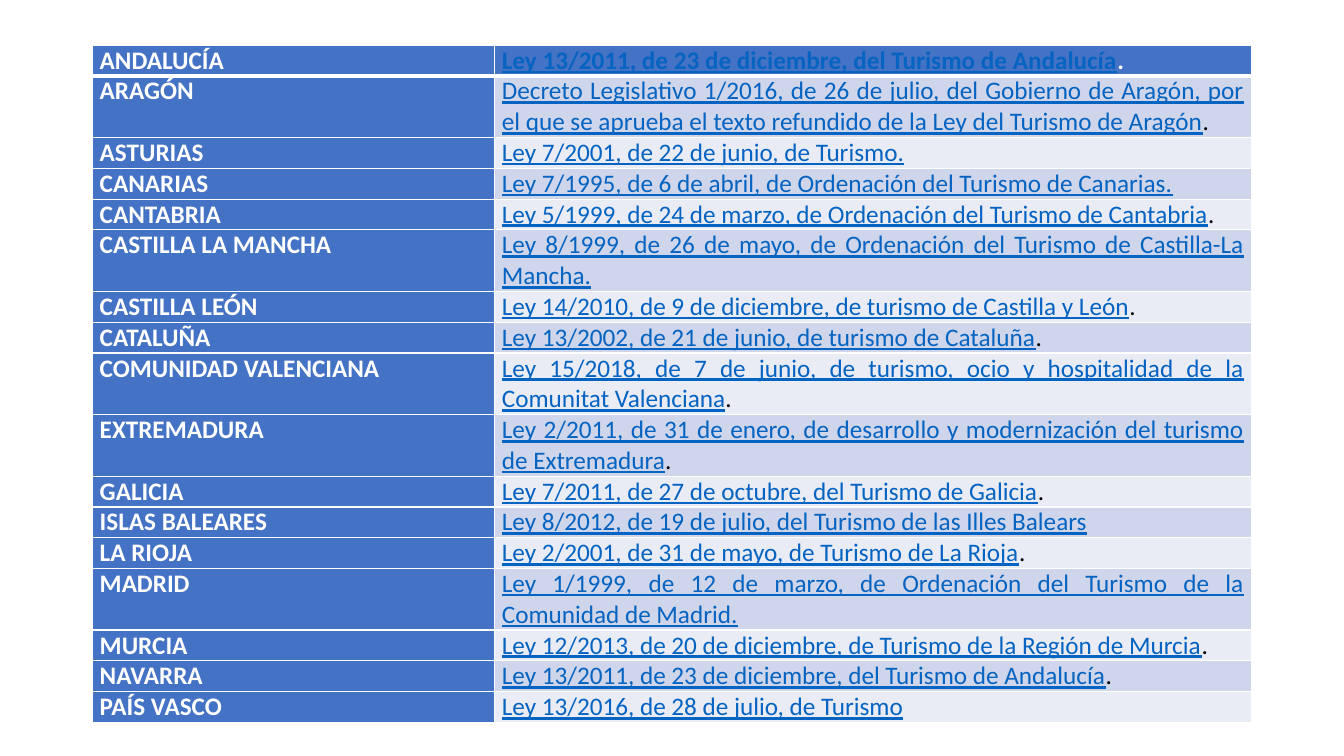
from dataclasses import dataclass
from lxml.etree import SubElement
from pptx import Presentation
from pptx.dml.color import RGBColor
from pptx.enum.text import PP_ALIGN
from pptx.oxml.ns import qn
from pptx.util import Pt

PX = 9525


@dataclass(frozen=True)
class Theme:
    font: str = "Calibri"
    size: int = 18
    white: str = "FFFFFF"
    black: str = "000000"
    blue: str = "4472C4"
    link: str = "0563C1"
    bands: tuple = ("E9EBF5", "CFD5EA")
    thin: int = 1
    thick: int = 3


THEME = Theme()

LAWS = [
    ("ANDALUCÍA", "Ley 13/2011, de 23 de diciembre, del Turismo de Andalucía", "."),
    ("ARAGÓN", "Decreto Legislativo 1/2016, de 26 de julio, del Gobierno de Aragón, "
     "por el que se aprueba el texto refundido de la Ley del Turismo de Aragón", "."),
    ("ASTURIAS", "Ley 7/2001, de 22 de junio, de Turismo.", ""),
    ("CANARIAS", "Ley 7/1995, de 6 de abril, de Ordenación del Turismo de Canarias.", ""),
    ("CANTABRIA", "Ley 5/1999, de 24 de marzo, de Ordenación del Turismo de Cantabria", "."),
    ("CASTILLA LA MANCHA",
     "Ley 8/1999, de 26 de mayo, de Ordenación del Turismo de Castilla-La Mancha.", ""),
    ("CASTILLA LEÓN", "Ley 14/2010, de 9 de diciembre, de turismo de Castilla y León", "."),
    ("CATALUÑA", "Ley 13/2002, de 21 de junio, de turismo de Cataluña", "."),
    ("COMUNIDAD VALENCIANA", "Ley 15/2018, de 7 de junio, de turismo, ocio y "
     "hospitalidad de la Comunitat Valenciana", "."),
    ("EXTREMADURA", "Ley 2/2011, de 31 de enero, de desarrollo y modernización "
     "del turismo de Extremadura", "."),
    ("GALICIA", "Ley 7/2011, de 27 de octubre, del Turismo de Galicia", "."),
    ("ISLAS BALEARES", "Ley 8/2012, de 19 de julio, del Turismo de las Illes Balears", ""),
    ("LA RIOJA", "Ley 2/2001, de 31 de mayo, de Turismo de La Rioja", "."),
    ("MADRID", "Ley 1/1999, de 12 de marzo, de Ordenación del Turismo de la "
     "Comunidad de Madrid.", ""),
    ("MURCIA", "Ley 12/2013, de 20 de diciembre, de Turismo de la Región de Murcia", "."),
    ("NAVARRA", "Ley 13/2011, de 23 de diciembre, del Turismo de Andalucía", "."),
    ("PAÍS VASCO", "Ley 13/2016, de 28 de julio, de Turismo", ""),
]


def write(para, text, color, bold=False, under=False):
    run = para.add_run()
    run.text = text
    font = run.font
    font.name, font.size = THEME.font, Pt(THEME.size)
    font.bold, font.underline = bold, under
    font.color.rgb = RGBColor.from_string(color)


def edge(cell, side, width):
    line = SubElement(cell._tc.get_or_add_tcPr(), qn(f"a:ln{side}"), w=str(Pt(width)))
    fill = SubElement(line, qn("a:solidFill"))
    SubElement(fill, qn("a:srgbClr"), val=THEME.white)


def style(cell, fill, row):
    cell.margin_left = cell.margin_right = 7 * PX
    cell.margin_top = cell.margin_bottom = 0
    for side in "LRTB":
        heavy = (row, side) in ((0, "B"), (1, "T"))
        edge(cell, side, THEME.thick if heavy else THEME.thin)
    cell.fill.solid()
    cell.fill.fore_color.rgb = RGBColor.from_string(fill)
    para = cell.text_frame.paragraphs[0]
    para.alignment = PP_ALIGN.JUSTIFY
    return para


def law_table(slide, left, top, width, split, step):
    tall = {1: 2 * step}
    total = step * (len(LAWS) + 1)
    box = [n * PX for n in (left, top, width, total)]
    table = slide.shapes.add_table(len(LAWS), 2, *box).table
    table.first_col = True
    table.columns[0].width = split * PX
    table.columns[1].width = (width - split) * PX
    for row, (region, law, stop) in enumerate(LAWS):
        head = row == 0
        table.rows[row].height = tall.get(row, step) * PX
        name = style(table.cell(row, 0), THEME.blue, row)
        write(name, region, THEME.white, bold=True)
        band = THEME.blue if head else THEME.bands[row % 2]
        para = style(table.cell(row, 1), band, row)
        write(para, law, THEME.link, bold=head, under=True)
        if stop:
            write(para, stop, THEME.white if head else THEME.black, bold=head)


def main():
    deck = Presentation()
    deck.slide_width, deck.slide_height = 1280 * PX, 720 * PX
    slide = deck.slides.add_slide(deck.slide_layouts[6])
    law_table(slide, left=88, top=43, width=1104, split=383, step=27)
    deck.save("out.pptx")


if __name__ == "__main__":
    main()
